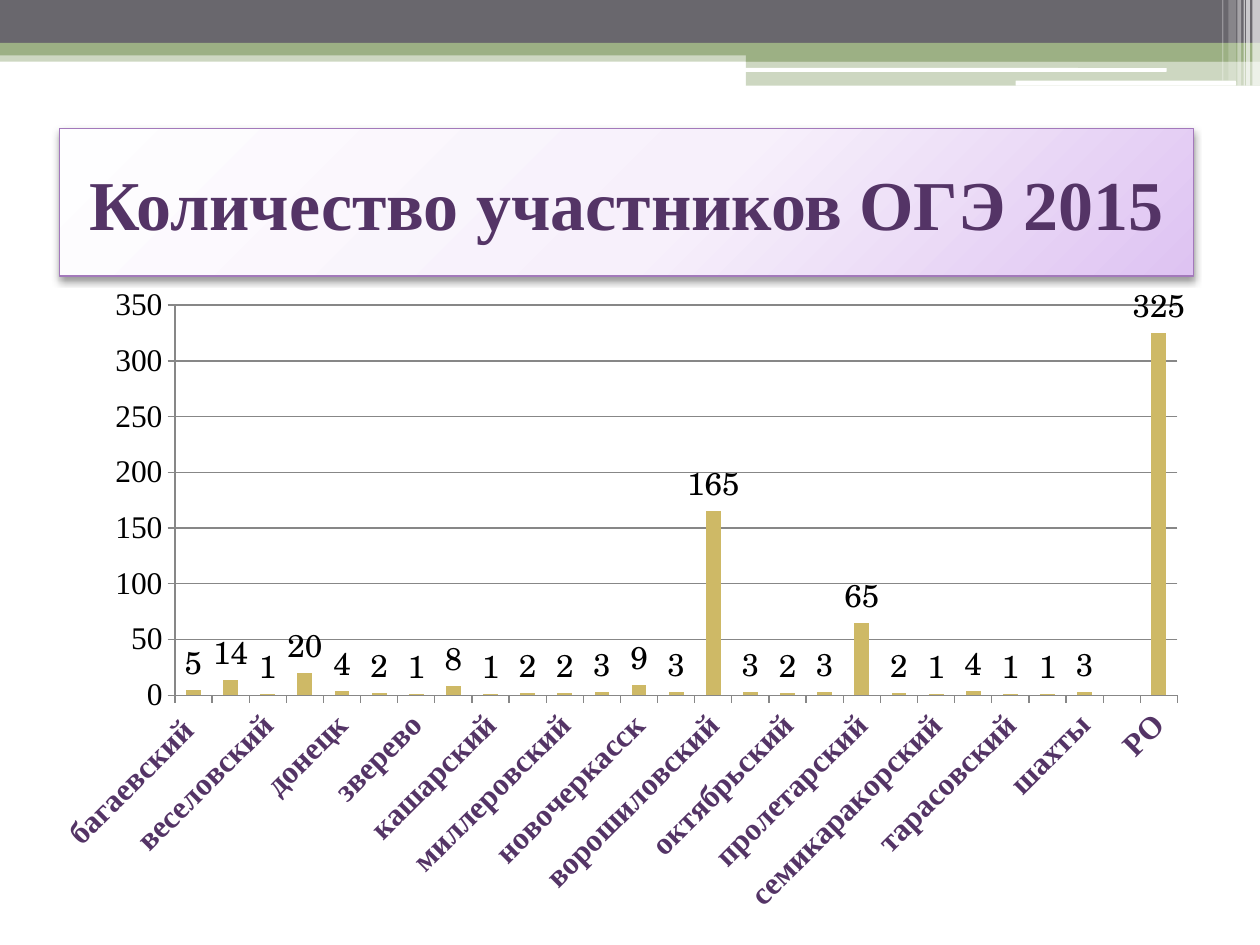
import pptx
import pptx.chart.data
import pptx.dml.color
import pptx.enum.chart
import pptx.enum.shapes
import pptx.enum.text
import pptx.oxml
import pptx.oxml.ns
import pptx.util
from pptx.util import Inches

DRAWING_NS = pptx.oxml.ns.nsdecls("a")
CHART_NS = pptx.oxml.ns.nsdecls("c")


def paint(color_format, hex_color, alpha=100):
    color_format.rgb = pptx.dml.color.RGBColor.from_string(hex_color)
    if alpha < 100:
        color = color_format._xFill.find(".//" + pptx.oxml.ns.qn("a:srgbClr"))
        color.append(pptx.oxml.parse_xml(f'<a:alpha {DRAWING_NS} val="{alpha * 1000}"/>'))


deck = pptx.Presentation()
deck.slide_width, deck.slide_height = Inches(10), Inches(7.5)
slide = deck.slides.add_slide(deck.slide_layouts[5])

title = slide.shapes.title
tree = slide.shapes._spTree
tree.remove(title._element)

RECT = pptx.enum.shapes.MSO_SHAPE.RECTANGLE
ROUND = pptx.enum.shapes.MSO_SHAPE.ROUNDED_RECTANGLE
bands = [
    (RECT, 0, 0.4, 10, 0.09, "9CB084", 50),
    (RECT, 0, 0, 10, 0.34, "69676D", 100),
    (RECT, 0, 0.34, 10, 0.1, "9CB084", 100),
    (RECT, 5.92, 0.39, 4.08, 0.1, "9CB084", 100),
    (RECT, 5.92, 0.48, 4.08, 0.2, "9CB084", 50),
    (ROUND, 5.91, 0.54, 3.35, 0.03, "FFFFFF", 100),
    (ROUND, 8.06, 0.64, 1.75, 0.04, "FFFFFF", 100),
]
stripes = [
    (9.94, 0.06, 0.68, 65),
    (9.89, 0.03, 0.68, 65),
    (9.87, 0.01, 0.68, 60),
    (9.82, 0.03, 0.68, 40),
    (9.75, 0.06, 0.64, 20),
    (9.7, 0.01, 0.64, 30),
]
bands += [(RECT, left, 0, width, height, "FFFFFF", alpha) for left, width, height, alpha in stripes]
for kind, left, top, width, height, color, alpha in bands:
    band = slide.shapes.add_shape(kind, Inches(left), Inches(top), Inches(width), Inches(height))
    band.shadow.inherit = False
    band.line.fill.background()
    band.fill.solid()
    paint(band.fill.fore_color, color, alpha)

tree.append(title._element)
title.left, title.top, title.width, title.height = Inches(0.47), Inches(1.02), Inches(9), Inches(1.17)
title.text_frame.text = "Количество участников ОГЭ 2015"
title.text_frame.vertical_anchor = pptx.enum.text.MSO_ANCHOR.MIDDLE
heading = title.text_frame.paragraphs[0]
heading.alignment = pptx.enum.text.PP_ALIGN.CENTER
heading.font.name = "Times New Roman"
heading.font.size = pptx.util.Pt(40)
heading.font.bold = True
paint(heading.font.color, "543466")
title.line.width = pptx.util.Pt(0.75)
paint(title.line.color, "A379BB")

gradient = pptx.oxml.parse_xml(
    f'<a:gradFill {DRAWING_NS} rotWithShape="1"><a:gsLst>'
    '<a:gs pos="0"><a:srgbClr val="FEFEFF"/></a:gs>'
    '<a:gs pos="55000"><a:srgbClr val="F7F0FB"/></a:gs>'
    '<a:gs pos="100000"><a:srgbClr val="DEC3F2"/></a:gs></a:gsLst>'
    '<a:path path="circle"><a:fillToRect l="-40000" t="-90000" r="140000" b="190000"/></a:path>'
    "</a:gradFill>"
)
shadow = pptx.oxml.parse_xml(
    f'<a:effectLst {DRAWING_NS}><a:outerShdw blurRad="{pptx.util.Pt(4.1)}" dist="{pptx.util.Pt(2)}" '
    'dir="5400000" rotWithShape="0"><a:srgbClr val="000000"><a:alpha val="40000"/></a:srgbClr>'
    "</a:outerShdw></a:effectLst>"
)
title_outline = title.line._ln
title_outline.addprevious(gradient)
title_outline.addnext(shadow)

participants = {
    "багаевский ": 5, "батайск": 14, "веселовский": 1, "вологодонск": 20, "донецк": 4,
    "егорлыкский": 2, "зверево": 1, "зерноградский": 8, "кашарский": 1,
    "константиновсикий": 2, "миллеровский": 2, "неклиновсикий": 3, "новочеркасск": 9,
    "орловский": 3, "ворошиловский": 165, "железнодорожный": 3, "октябрьский": 2,
    "первомайский": 3, "пролетарский": 65, "сальский": 2, "семикаракорский": 1,
    "таганрог": 4, "тарасовский": 1, "цимлянский": 1, "шахты": 3, "": None, "РО": 325,
}
counts = pptx.chart.data.CategoryChartData()
counts.categories = list(participants)
counts.add_series("Series 1", list(participants.values()))
chart = slide.shapes.add_chart(
    pptx.enum.chart.XL_CHART_TYPE.COLUMN_CLUSTERED,
    Inches(0.31), Inches(2.19), Inches(9.22), Inches(5.16), counts,
).chart
chart.has_title = False
chart.has_legend = False
chart.font.name = "TeX Gyre Schola"
chart.font.size = pptx.util.Pt(18)
paint(chart.font.color, "000000")

plot = chart.plots[0]
plot.gap_width = 150
plot.vary_by_categories = False
columns = plot.series[0]
columns.format.fill.solid()
paint(columns.format.fill.fore_color, "CEB966")
plot.has_data_labels = True
plot.data_labels.show_value = True
plot.data_labels.position = pptx.enum.chart.XL_LABEL_POSITION.OUTSIDE_END

districts, scale = chart.category_axis, chart.value_axis
for axis, color in ((districts, "543466"), (scale, "000000")):
    axis.major_tick_mark = pptx.enum.chart.XL_TICK_MARK.OUTSIDE
    axis.tick_labels.font.name = "Times New Roman"
    axis.tick_labels.font.size = pptx.util.Pt(18)
    paint(axis.tick_labels.font.color, color)
    paint(axis.format.line.color, "878787")
districts.tick_labels.font.bold = True
districts._element.txPr.bodyPr.set("rot", "-2700000")
districts._element.find(pptx.oxml.ns.qn("c:noMultiLvlLbl")).addprevious(
    pptx.oxml.parse_xml(f'<c:tickLblSkip {CHART_NS} val="2"/>')
)
scale.minimum_scale, scale.maximum_scale, scale.major_unit = 0, 350, 50
scale.has_major_gridlines = True
paint(scale.major_gridlines.format.line.color, "878787")

plot_area = chart._chartSpace.chart.plotArea
for automatic_layout in plot_area.findall(pptx.oxml.ns.qn("c:layout")):
    plot_area.remove(automatic_layout)
plot_area.insert(0, pptx.oxml.parse_xml(
    f'<c:layout {CHART_NS}><c:manualLayout><c:layoutTarget val="inner"/>'
    '<c:xMode val="edge"/><c:yMode val="edge"/>'
    '<c:x val="0.117"/><c:y val="0.045"/><c:w val="0.863"/><c:h val="0.6"/>'
    "</c:manualLayout></c:layout>"
))

deck.save("out.pptx")
